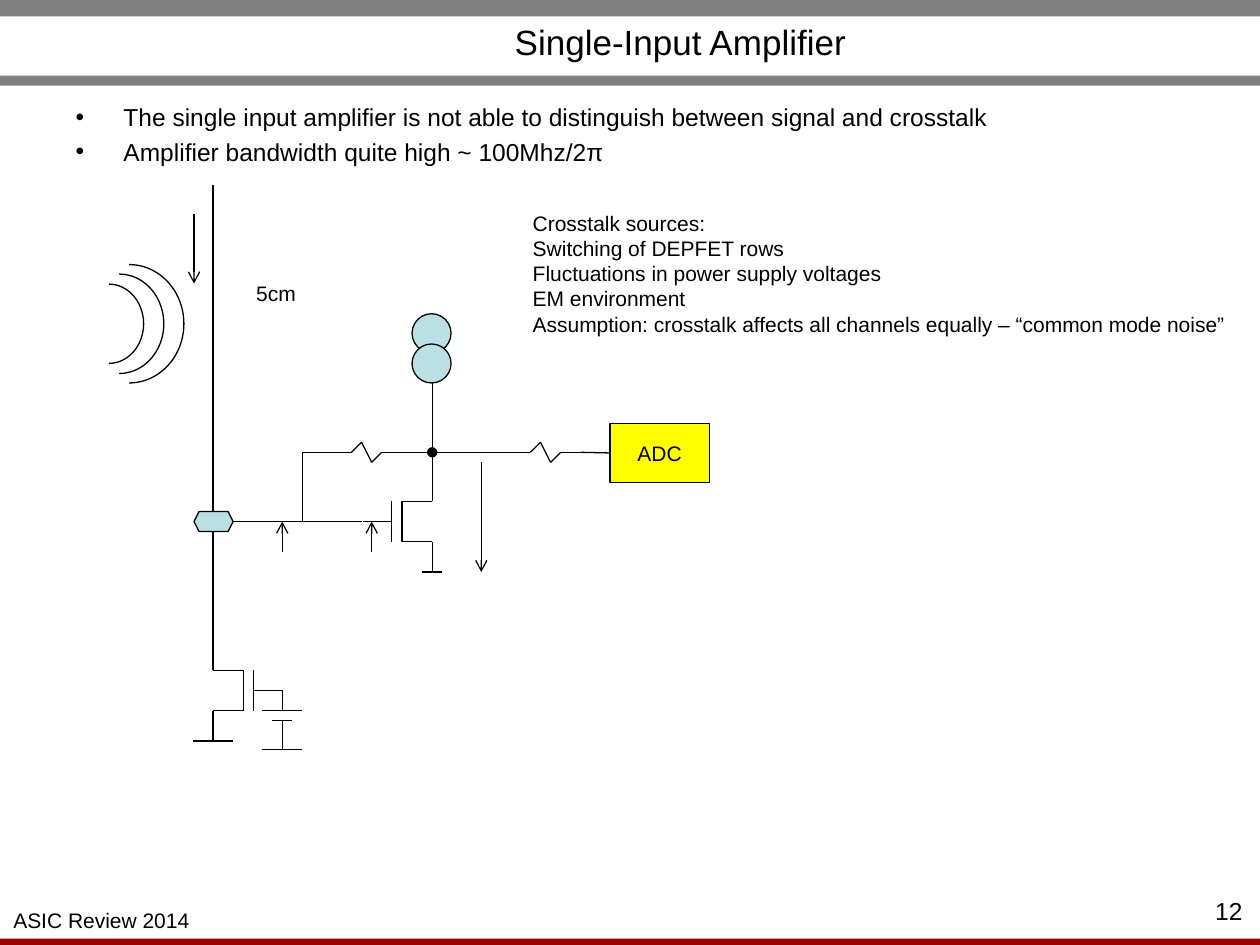
from itertools import pairwise

from lxml import etree
from pptx import Presentation
from pptx import util as u
from pptx.dml.color import RGBColor
from pptx.enum import shapes, text
from pptx.oxml.ns import qn

KIND = shapes.MSO_SHAPE
ALIGN = text.PP_ALIGN
ANCHOR = text.MSO_ANCHOR


def color(hex_string):
    return RGBColor.from_string(hex_string)


class CircuitSlide:
    font = "Arial"
    ink = "000000"
    grey = "808080"
    red = "990000"
    pale = "BBE0E3"
    yellow = "FFFF00"
    stroke = u.Pt(0.75)

    def __init__(self, deck):
        self.page = deck.slides.add_slide(deck.slide_layouts[1])

    def set_text(self, frame, lines, size, align, anchor=ANCHOR.TOP, wrap=True):
        frame.text = "\n".join(lines)
        frame.auto_size = text.MSO_AUTO_SIZE.NONE
        frame.word_wrap = wrap
        frame.vertical_anchor = anchor
        for para in frame.paragraphs:
            para.alignment = align
            para.font.name = self.font
            para.font.size = u.Pt(size)
            para.font.color.rgb = color(self.ink)

    def move(self, box, left, top, width, height):
        box.left, box.top = u.Inches(left), u.Inches(top)
        box.width, box.height = u.Inches(width), u.Inches(height)

    def title(self, words, *place):
        box = self.page.shapes.title
        self.move(box, *place)
        self.set_text(box.text_frame, [words], 20, ALIGN.CENTER, ANCHOR.MIDDLE)

    def bullets(self, lines, *place):
        box = self.page.placeholders[1]
        self.move(box, *place)
        self.set_text(box.text_frame, lines, 14, ALIGN.LEFT)
        for index, para in enumerate(box.text_frame.paragraphs):
            props = para._p.get_or_add_pPr()
            props.set("marL", str(u.Inches(0.38)))
            props.set("indent", str(u.Inches(-0.38)))
            para.space_before = u.Pt(3 if index else 0)

    def label(self, lines, *place, size=12, align=ALIGN.LEFT, wrap=False):
        box = self.page.shapes.add_textbox(*map(u.Inches, place))
        self.set_text(box.text_frame, lines, size, align, wrap=wrap)

    def shape(self, kind, *place, fill=None, outline=True):
        shape = self.page.shapes.add_shape(kind, *map(u.Inches, place))
        shape.shadow.inherit = False
        if fill:
            shape.fill.solid()
            shape.fill.fore_color.rgb = color(fill)
        else:
            shape.fill.background()
        if outline:
            shape.line.color.rgb = color(self.ink)
            shape.line.width = self.stroke
        else:
            shape.line.fill.background()
        return shape

    def bar(self, top, height, fill):
        self.shape(KIND.RECTANGLE, 0, top, 10, height, fill=fill, outline=False)

    def block(self, words, *place):
        block = self.shape(KIND.RECTANGLE, *place, fill=self.yellow)
        self.set_text(block.text_frame, [words], 12, ALIGN.CENTER, ANCHOR.MIDDLE, wrap=False)
        return block

    def line(self, start, end, head=None, tail=None):
        line = self.page.shapes.add_connector(
            shapes.MSO_CONNECTOR.STRAIGHT, *map(u.Inches, (*start, *end)))
        line.line.color.rgb = color(self.ink)
        line.line.width = self.stroke
        stroke = line.line._get_or_add_ln()
        for tag, kind in (("a:headEnd", head), ("a:tailEnd", tail)):
            if kind:
                etree.SubElement(stroke, qn(tag), type=kind)
        etree.SubElement(line._element.spPr, qn("a:effectLst"))
        return line

    def arrow(self, x, start, end):
        self.line((x, start), (x, end), tail="arrow")

    def wire(self, *points):
        """Draw a line through the points and return its last piece."""
        return [self.line(*ends) for ends in pairwise(points)][-1]

    def bars_across(self, x, y, half_width):
        self.line((x - half_width, y), (x + half_width, y))

    def resistor(self, x, y):
        steps = ((0, 0), (0.24, 0), (0.39, 0), (0.47, -0.08), (0.55, 0.08),
                 (0.63, 0), (0.79, 0), (1.02, 0))
        return self.wire(*((x + dx, y + dy) for dx, dy in steps))

    def transistor(self, x, top, side):
        """Draw drain and source at x, with the gate to the left (-1) or right (1)."""
        channel, gate, lead = (x + side * dx for dx in (0.24, 0.32, 0.55))
        upper, middle, lower = (top + dy for dy in (0.23, 0.39, 0.55))
        self.wire((x, top), (x, upper), (channel, upper), (channel, lower),
                  (x, lower), (x, top + 0.79))
        self.line((gate, upper), (gate, lower))
        self.line((gate, middle), (lead, middle))

    def wave(self, width, height, middle):
        for flipped in (False, True):
            arc = self.shape(KIND.ARC, 0.59, middle - height / 2, width, height)
            if flipped:
                arc._element.spPr.xfrm.set("flipV", "1")


def main():
    deck = Presentation()
    deck.slide_width, deck.slide_height = u.Inches(10), u.Inches(7.5)
    slide = CircuitSlide(deck)

    slide.bar(7.45, 0.05, slide.red)
    slide.bar(0, 0.13, slide.grey)
    slide.bar(0.6, 0.08, slide.grey)
    slide.label(["ASIC Review 2014"], 0, 7.15, 1.61, 0.3, align=ALIGN.CENTER)
    slide.title("Single-Input Amplifier", 1.3, 0.14, 8.2, 0.38)
    slide.bullets([
        "The single input amplifier is not able to distinguish between signal and crosstalk",
        "Amplifier bandwidth quite high ~ 100Mhz/2π",
    ], 0.5, 0.76, 9, 0.39)
    slide.label(["12"], 9.49, 7.06, 0.47, 0.24, size=14, align=ALIGN.RIGHT, wrap=True)

    # Amplifier stage with its current source, feedback and output
    input_y, output_y, output_x = 4.14, 3.59, 3.43
    slide.transistor(output_x, 3.75, side=-1)
    for top in (2.49, 2.73):
        slide.shape(KIND.OVAL, 3.27, top, 0.31, 0.31, fill=slide.pale)
    slide.bars_across(output_x, 4.54, 0.08)
    slide.line((output_x, 3.83), (output_x, 3.04))
    slide.line((output_x, output_y), (3.82, output_y), head="oval")
    slide.resistor(2.4, output_y)
    slide.line((2.4, output_y), (2.4, input_y))
    slide.line((2.87, input_y), (1.85, input_y))
    adc = slide.block("ADC", 4.84, 3.36, 0.79, 0.47)
    slide.resistor(3.82, output_y).end_connect(adc, 1)

    # Long input line and its pad
    line_x = 1.69
    slide.line((line_x, input_y), (line_x, 1.47))
    slide.shape(KIND.HEXAGON, 1.54, 4.06, 0.31, 0.16, fill=slide.pale)
    slide.line((line_x, 5.17), (line_x, 4.22))

    # Signal directions
    for x in (2.24, 2.95):
        slide.arrow(x, 4.38, input_y)
    slide.arrow(3.82, 3.67, 4.54)
    slide.arrow(1.54, 1.7, 2.25)

    # Crosstalk waves
    for width, height in ((0.55, 0.63), (0.71, 0.79), (0.87, 0.94)):
        slide.wave(width, height, middle=2.57)

    # Bias transistor and its voltage source
    slide.transistor(line_x, 5.09, side=1)
    slide.bars_across(line_x, 5.88, 0.16)
    bias_x = 2.24
    slide.line((bias_x, 5.48), (bias_x, 5.64))
    slide.line((bias_x, 5.72), (bias_x, 5.95))
    for y, half_width in ((5.64, 0.16), (5.72, 0.08), (5.95, 0.16)):
        slide.bars_across(bias_x, y, half_width)

    slide.label([
        "Crosstalk sources:",
        "Switching of DEPFET rows",
        "Fluctuations in power supply voltages",
        "EM environment",
        "Assumption: crosstalk affects all channels equally – “common mode noise”",
    ], 4.13, 1.62, 5.74, 1.11)
    slide.label(["5cm"], 1.93, 2.18, 0.52, 0.3, align=ALIGN.CENTER)

    deck.save("out.pptx")


if __name__ == "__main__":
    main()
